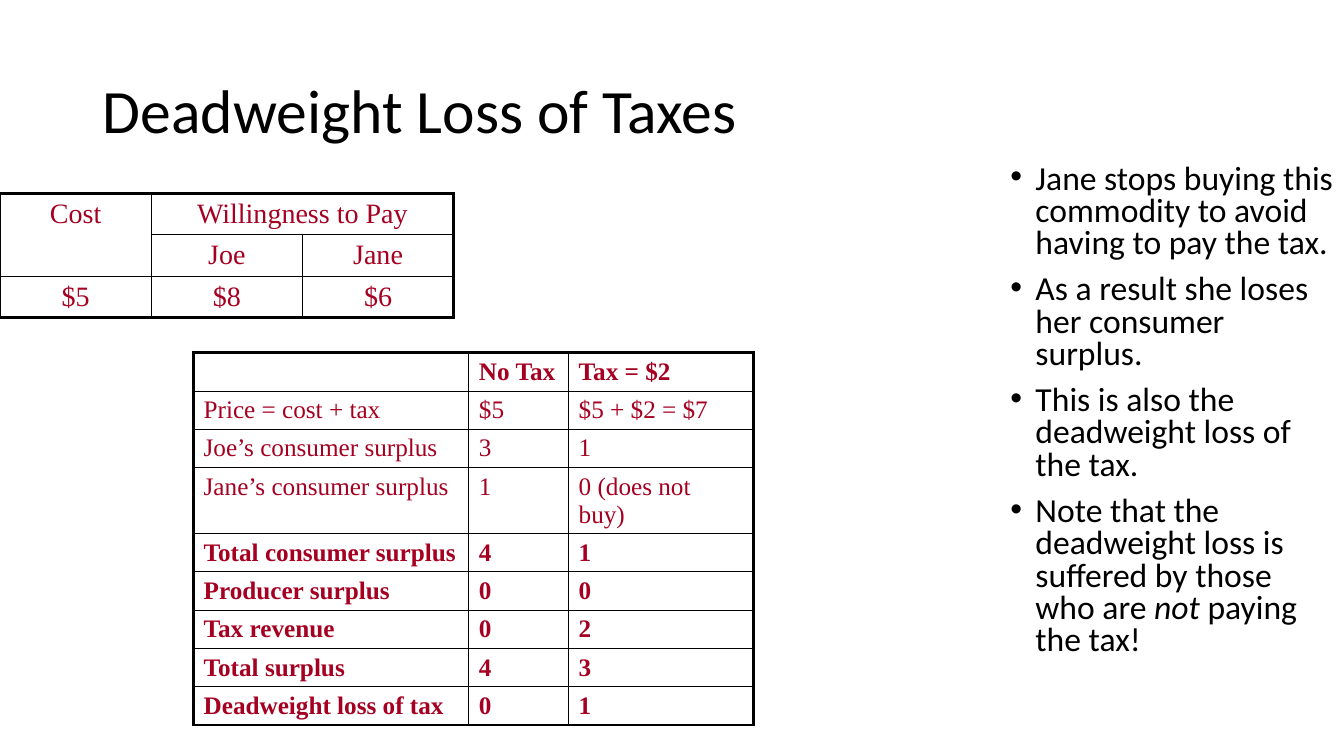
from lxml import etree
from pptx import Presentation
from pptx.dml.color import RGBColor
from pptx.enum.text import MSO_ANCHOR, MSO_AUTO_SIZE, PP_ALIGN
from pptx.oxml.ns import qn
from pptx.util import Inches, Pt

LEFT, CENTER = PP_ALIGN.LEFT, PP_ALIGN.CENTER
TOP, MIDDLE = MSO_ANCHOR.TOP, MSO_ANCHOR.MIDDLE
NO_FIT = MSO_AUTO_SIZE.NONE
BLACK = RGBColor(0x00, 0x00, 0x00)
CRIMSON = RGBColor(0xA5, 0x00, 0x21)
SANS, SERIF = "Calibri", "Times New Roman"
OUTER, INNER = 2.25, 1

PAY_ROWS = [
    ["Cost", "Willingness to Pay", ""],
    ["", "Joe", "Jane"],
    ["$5", "$8", "$6"],
]
SURPLUS_ROWS = [
    ["", "No Tax", "Tax = $2"],
    ["Price = cost + tax", "$5", "$5 + $2 = $7"],
    ["Joe’s consumer surplus", "3", "1"],
    ["Jane’s consumer surplus", "1", "0 (does not buy)"],
    ["Total consumer surplus", "4", "1"],
    ["Producer surplus", "0", "0"],
    ["Tax revenue", "0", "2"],
    ["Total surplus", "4", "3"],
    ["Deadweight loss of tax", "0", "1"],
]
PLAIN_ROWS = range(1, 4)
NOTES = [
    [("Jane stops buying this commodity to avoid having to pay the tax.", False)],
    [("As a result she loses her consumer surplus.", False)],
    [("This is also the deadweight loss of the tax.", False)],
    [("Note that the deadweight loss is suffered by those who are ", False),
     ("not", True), (" paying the tax!", False)],
]


def write(p, text, size, font=SANS, color=BLACK, bold=False, italic=False, align=LEFT):
    """Add a formatted run to a paragraph."""
    p.alignment = align
    r = p.add_run()
    r.text = text
    r.font.size, r.font.name = Pt(size), font
    r.font.bold, r.font.italic = bold, italic
    r.font.color.rgb = color


def place(sp, box):
    """Move a shape to a box given in inches."""
    sp.left, sp.top, sp.width, sp.height = [Inches(v) for v in box]


def add_title(slide, box):
    """Fill the title placeholder."""
    sp = slide.shapes.title
    place(sp, box)
    tf = sp.text_frame
    tf.vertical_anchor, tf.auto_size = MIDDLE, NO_FIT
    p = tf.paragraphs[0]
    p.line_spacing = 0.9
    write(p, "Deadweight Loss of Taxes", 44)


def add_notes(slide, box):
    """Fill the body placeholder with the bulleted list."""
    sp = slide.placeholders[1]
    place(sp, box)
    tf = sp.text_frame
    tf.vertical_anchor, tf.auto_size = TOP, NO_FIT
    for i, runs in enumerate(NOTES):
        p = tf.add_paragraph() if i else tf.paragraphs[0]
        p.line_spacing, p.space_before = 0.8, Pt(10)
        for text, italic in runs:
            write(p, text, 24, italic=italic)
        pPr = p._p.get_or_add_pPr()
        pPr.set("marL", str(Inches(0.25)))
        pPr.set("indent", str(-Inches(0.25)))
        etree.SubElement(pPr, qn("a:buFont")).set("typeface", "Arial")
        etree.SubElement(pPr, qn("a:buChar")).set("char", "•")


def set_borders(cell, widths):
    """Draw the left, right, top and bottom borders of a cell."""
    tcPr = cell._tc.get_or_add_tcPr()
    for i, (side, width) in enumerate(zip("LRTB", widths)):
        ln = etree.Element(qn(f"a:ln{side}"), w=str(Pt(width)))
        fill = etree.SubElement(ln, qn("a:solidFill"))
        etree.SubElement(fill, qn("a:srgbClr")).set("val", str(BLACK))
        tcPr.insert(i, ln)


def add_grid(slide, left, top, col_widths, row_height, rows, size,
             align=LEFT, bold_rows=(), merges=()):
    """Build a table with thick outer and thin inner borders."""
    n_rows, n_cols = len(rows), len(col_widths)
    box = [Inches(v) for v in (left, top, sum(col_widths), row_height * n_rows)]
    table = slide.shapes.add_table(n_rows, n_cols, *box).table
    table.first_row = table.horz_banding = False
    for column, width in zip(table.columns, col_widths):
        column.width = Inches(width)
    for first, last in merges:
        table.cell(*first).merge(table.cell(*last))
    for i, row in enumerate(rows):
        table.rows[i].height = Inches(row_height)
        for j, text in enumerate(row):
            cell = table.cell(i, j)
            cell.fill.background()
            p = cell.text_frame.paragraphs[0]
            if text:
                write(p, text, size, SERIF, CRIMSON, i in bold_rows, align=align)
            else:
                p._p.get_or_add_endParaRPr().set("sz", "1600")
            if cell.is_spanned:
                continue
            right = j + (cell.span_width if cell.is_merge_origin else 1)
            bottom = i + (cell.span_height if cell.is_merge_origin else 1)
            edges = (j == 0, right == n_cols, i == 0, bottom == n_rows)
            set_borders(cell, [OUTER if edge else INNER for edge in edges])


def main():
    """Build the slide and save it."""
    prs = Presentation()
    prs.slide_width, prs.slide_height = Inches(13.33), Inches(7.5)
    slide = prs.slides.add_slide(prs.slide_layouts[1])
    add_title(slide, (0.92, 0.4, 11.5, 1.45))
    bold_rows = [i for i in range(len(SURPLUS_ROWS)) if i not in PLAIN_ROWS]
    add_grid(slide, 1.92, 3.5, [2.73, 0.99, 1.83], 0.38, SURPLUS_ROWS, 18,
             bold_rows=bold_rows)
    add_notes(slide, (9.92, 1.58, 3.42, 5.68))
    add_grid(slide, 0, 1.92, [1.5] * 3, 0.41, PAY_ROWS, 20, align=CENTER,
             merges=[((0, 0), (1, 0)), ((0, 1), (0, 2))])
    prs.save("out.pptx")


if __name__ == "__main__":
    main()
